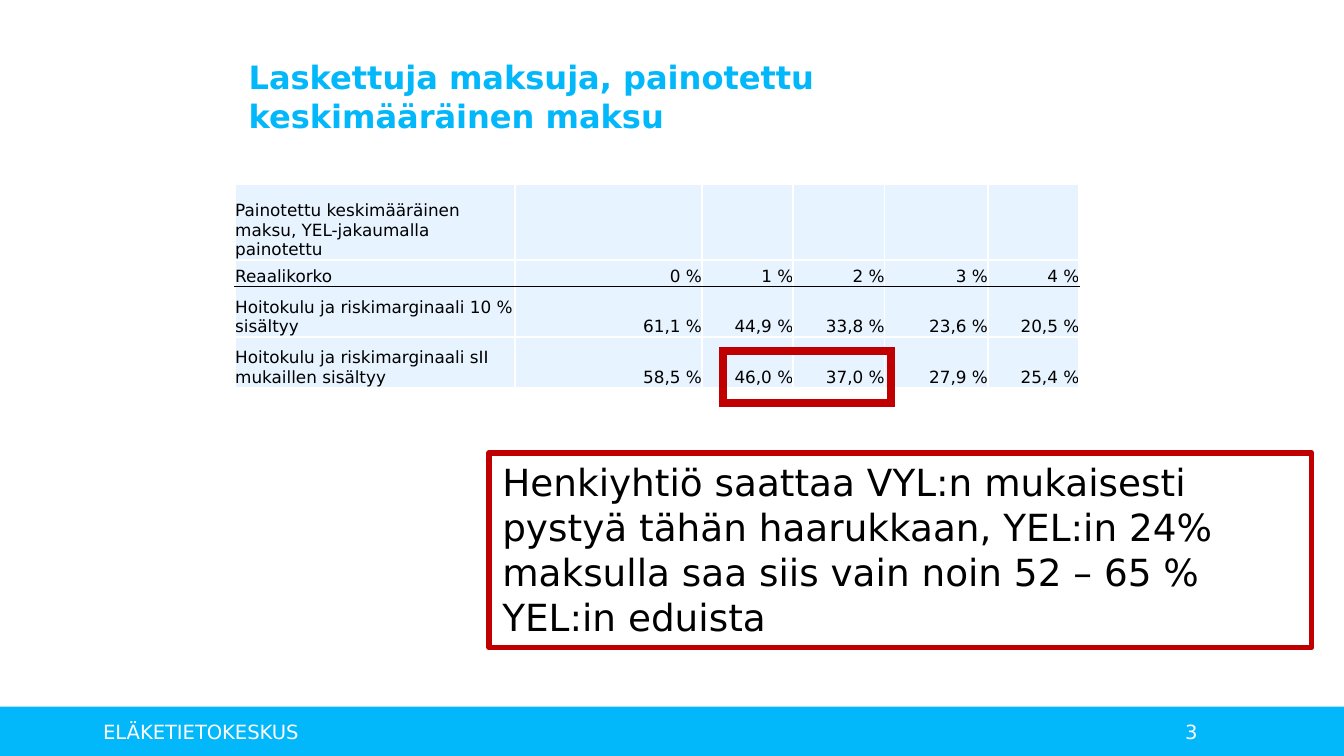
import pptx
import pptx.util
import pptx.dml.color
import pptx.enum.shapes
import pptx.enum.text
import pptx.oxml
import pptx.oxml.ns

Pt = pptx.util.Pt
ANCHOR = pptx.enum.text.MSO_ANCHOR
ALIGN = pptx.enum.text.PP_ALIGN
RECTANGLE = pptx.enum.shapes.MSO_SHAPE.RECTANGLE

# Content
TITLE = "Laskettuja maksuja, painotettu keskimääräinen maksu"
ROWS = [
    ["Painotettu keskimääräinen maksu, YEL-jakaumalla painotettu", "", "", "", "", ""],
    ["Reaalikorko", "0 %", "1 %", "2 %", "3 %", "4 %"],
    ["Hoitokulu ja riskimarginaali 10 % sisältyy",
     "61,1 %", "44,9 %", "33,8 %", "23,6 %", "20,5 %"],
    ["Hoitokulu ja riskimarginaali sII mukaillen sisältyy",
     "58,5 %", "46,0 %", "37,0 %", "27,9 %", "25,4 %"],
]
CALLOUT = ("Henkiyhtiö saattaa VYL:n mukaisesti pystyä tähän haarukkaan, "
           "YEL:in 24% maksulla saa siis vain noin 52 – 65 % YEL:in eduista")
FOOTERS = [("3", 627.8, 85), ("ELÄKETIETOKESKUS", 48.2, 395)]

# Style and layout, in points
FONT = "DejaVu Sans"
COLORS = {"accent": "02B7FA", "cell": "E7F3FE", "mark": "C00000",
          "text": "000000", "white": "FFFFFF"}
SLIDE_WIDTH, SLIDE_HEIGHT = 720, 405
BAND_TOP = 378.5
COLUMN_WIDTHS = [150, 100, 49, 49, 55.3, 49]
ROW_HEIGHTS = [40.5, 14.2, 27.1, 27.1]
HEADER_ROW = 1


def color(name):
    return pptx.dml.color.RGBColor.from_string(COLORS[name])


def format_text(text_frame, size, color_name, bold=False, align=ALIGN.LEFT):
    for paragraph in text_frame.paragraphs:
        paragraph.alignment = align
        for run in paragraph.runs:
            run.font.name = FONT
            run.font.size = Pt(size)
            run.font.bold = bold
            run.font.color.rgb = color(color_name)


def add_rectangle(slide, left, top, width, height, fill=None, line=None, line_width=0):
    shape = slide.shapes.add_shape(RECTANGLE, Pt(left), Pt(top), Pt(width), Pt(height))
    shape.shadow.inherit = False
    if fill:
        shape.fill.solid()
        shape.fill.fore_color.rgb = color(fill)
    else:
        shape.fill.background()
    if line:
        shape.line.color.rgb = color(line)
        shape.line.width = Pt(line_width)
    else:
        shape.line.fill.background()
    return shape


def set_borders(cell, **border_colors):
    properties = cell._tc.get_or_add_tcPr()
    for position, (side, name) in enumerate(border_colors.items()):
        properties.insert(position, pptx.oxml.parse_xml(
            f'<a:ln{side} {pptx.oxml.ns.nsdecls("a")} w="12700"><a:solidFill>'
            f'<a:srgbClr val="{COLORS[name]}"/></a:solidFill></a:ln{side}>'))


def add_fee_table(slide):
    frame = slide.shapes.add_table(
        len(ROWS), len(COLUMN_WIDTHS), Pt(126), Pt(98.8),
        Pt(sum(COLUMN_WIDTHS)), Pt(sum(ROW_HEIGHTS)))
    table = frame.table
    for column, width in zip(table.columns, COLUMN_WIDTHS):
        column.width = Pt(width)
    for row_index, (values, height) in enumerate(zip(ROWS, ROW_HEIGHTS)):
        table.rows[row_index].height = Pt(height)
        for column_index, value in enumerate(values):
            cell = table.cell(row_index, column_index)
            cell.text_frame.text = value
            cell.vertical_anchor = ANCHOR.BOTTOM
            cell.margin_left = cell.margin_right = 0
            cell.margin_top = cell.margin_bottom = 0
            cell.fill.solid()
            cell.fill.fore_color.rgb = color("cell")
            format_text(cell.text_frame, 9, "text",
                        align=ALIGN.RIGHT if column_index else ALIGN.LEFT)
            set_borders(cell, L="white", R="white",
                        T="text" if row_index == HEADER_ROW + 1 else "white",
                        B="text" if row_index == HEADER_ROW else "white")


def main():
    presentation = pptx.Presentation()
    presentation.slide_width = Pt(SLIDE_WIDTH)
    presentation.slide_height = Pt(SLIDE_HEIGHT)
    slide = presentation.slides.add_slide(presentation.slide_layouts[5])

    # Footer band
    add_rectangle(slide, 0, BAND_TOP, SLIDE_WIDTH, SLIDE_HEIGHT - BAND_TOP, fill="accent")
    for text, left, width in FOOTERS:
        box = slide.shapes.add_textbox(Pt(left), Pt(381), Pt(width), Pt(21.6))
        box.text_frame.word_wrap = True
        box.text_frame.vertical_anchor = ANCHOR.MIDDLE
        box.text_frame.text = text
        format_text(box.text_frame, 10.5, "white")

    # Title
    title = slide.shapes.title
    title.left, title.top, title.width, title.height = Pt(126), Pt(12.2), Pt(466), Pt(78.5)
    title.text_frame.text = TITLE
    title.text_frame.auto_size = pptx.enum.text.MSO_AUTO_SIZE.NONE
    title.text_frame.vertical_anchor = ANCHOR.MIDDLE
    format_text(title.text_frame, 17.2, "accent", bold=True)

    add_fee_table(slide)

    # Frame around the highlighted rates, with sharp corners
    highlight = add_rectangle(slide, 387.4, 188, 90, 28, line="mark", line_width=4.5)
    highlight.line._get_or_add_ln().append(pptx.oxml.parse_xml(
        f'<a:miter {pptx.oxml.ns.nsdecls("a")} lim="800000"/>'))

    # Conclusion
    callout = add_rectangle(slide, 262, 242.6, 440.6, 104.4, line="mark", line_width=3)
    callout.text_frame.word_wrap = True
    callout.text_frame.vertical_anchor = ANCHOR.TOP
    callout.text_frame.text = CALLOUT
    format_text(callout.text_frame, 20, "text")

    presentation.save("out.pptx")


if __name__ == "__main__":
    main()
